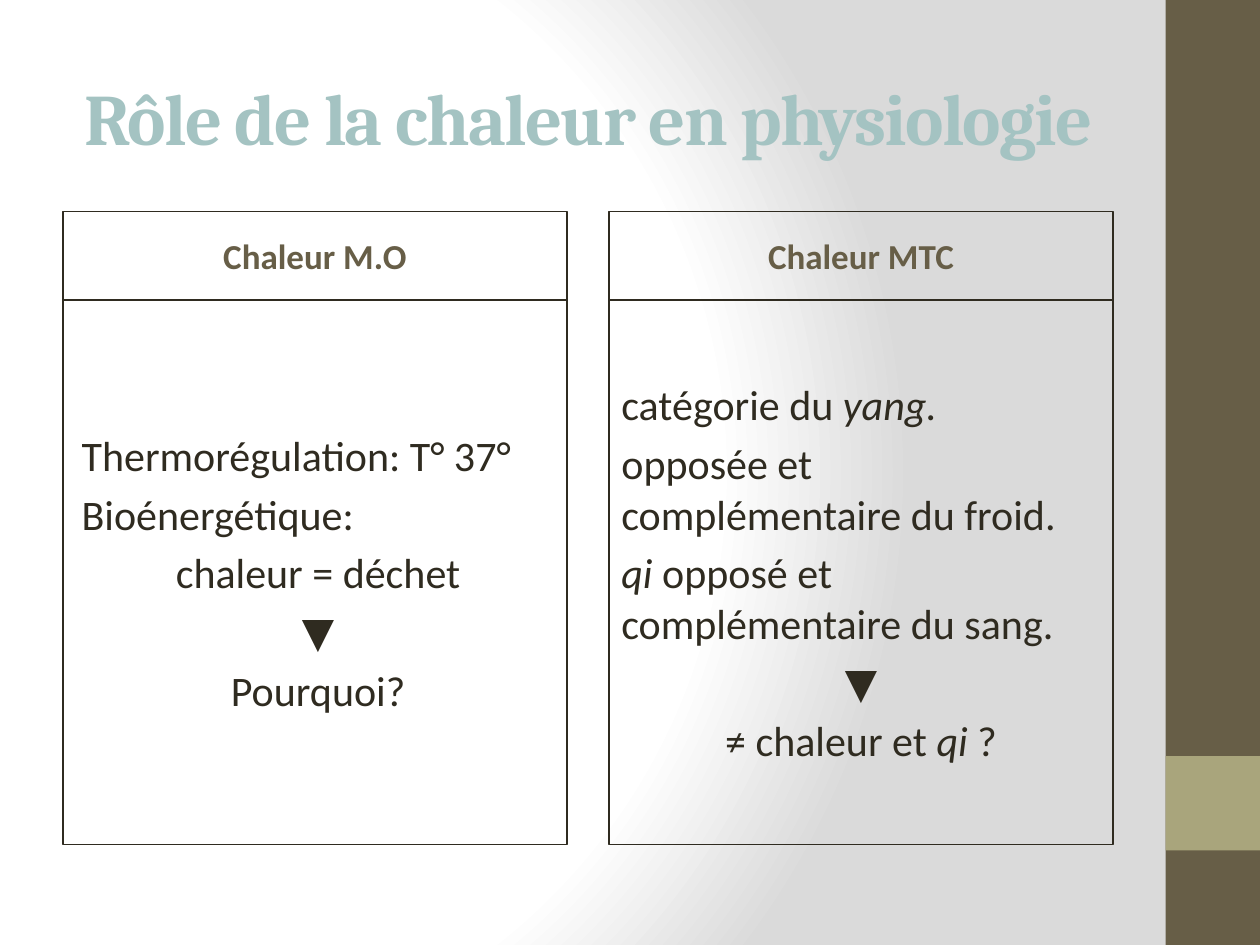
from pptx import Presentation
from pptx import util as u
from pptx.dml import color
from pptx.enum import shapes, text
from pptx.oxml import parse_xml
from pptx.oxml import ns

INK, BROWN, OLIVE, TEAL = "2F2B20", "675E47", "A9A57C", "A4C3C2"
LEFT, CENTER = text.PP_ALIGN.LEFT, text.PP_ALIGN.CENTER
ARROW = (CENTER, [("▼", "Quicksand", False)])


def rgb(value):
    """Turn a hex string into a colour."""
    return color.RGBColor.from_string(value)


def plain(words, align=LEFT):
    """Describe a paragraph of upright Calibri text."""
    return mixed((words, False), align=align)


def mixed(*parts, align=LEFT):
    """Describe a paragraph of (words, italic) parts."""
    return align, [(words, "Calibri", italic) for words, italic in parts]


def set_background(page):
    """Give the page a white to grey radial gradient."""
    stops = [(0, "FFFFFF"), (75, "FFFFFF"), (100, "DADADA")]
    listing = "".join(
        f'<a:gs pos="{place * 1000}"><a:srgbClr val="{value}"/></a:gs>'
        for place, value in stops)
    background = parse_xml(
        f'<p:bg {ns.nsdecls("p", "a")}><p:bgPr><a:gradFill rotWithShape="1">'
        f'<a:gsLst>{listing}</a:gsLst><a:path path="circle">'
        '<a:fillToRect l="20000" t="50000" r="100000" b="50000"/></a:path>'
        '</a:gradFill><a:effectLst/></p:bgPr></p:bg>')
    page.element.cSld.insert(0, background)


def add_rectangle(page, bounds, fill=None, line=None):
    """Add a rectangle with an optional fill and outline."""
    box = page.shapes.add_shape(
        shapes.MSO_SHAPE.RECTANGLE, *[u.Pt(length) for length in bounds])
    box.shadow.inherit = False
    if fill:
        box.fill.solid()
        box.fill.fore_color.rgb = rgb(fill)
    else:
        box.fill.background()
    if line:
        box.line.color.rgb = rgb(line)
        box.line.width = u.Pt(0.75)
    else:
        box.line.fill.background()
    return box


def write(box, paragraphs, size, ink, bold=False, before=0, indent=0):
    """Fill a box with middle-anchored paragraphs."""
    frame = box.text_frame
    frame.word_wrap = True
    frame.vertical_anchor = text.MSO_ANCHOR.MIDDLE
    for index, (align, spans) in enumerate(paragraphs):
        para = frame.add_paragraph() if index else frame.paragraphs[0]
        para.alignment = align
        para.space_before = u.Pt(before)
        if indent:
            para._p.get_or_add_pPr().set("marL", str(u.Pt(indent)))
        for words, font, italic in spans:
            span = para.add_run()
            span.text = words
            span.font.name = font
            span.font.size = u.Pt(size)
            span.font.bold = bold
            span.font.italic = italic
            span.font.color.rgb = rgb(ink)


def add_title(page, words):
    """Add the centred, slightly tightened title."""
    box = page.shapes.add_textbox(u.Pt(36), u.Pt(21.6), u.Pt(600), u.Pt(90))
    write(box, [(CENTER, [(words, "Cambria", False)])], 41.4, TEAL, bold=True)
    span = box.text_frame.paragraphs[0].runs[0]
    span.font._element.set("spc", "-100")


def add_card(page, left, heading, paragraphs, indent=0):
    """Add an outlined heading with an outlined body below it."""
    top, width, height = 121, 288, 50.4
    header = add_rectangle(page, (left, top, width, height), line=INK)
    write(header, [plain(heading, CENTER)], 20, BROWN, bold=True, before=4)
    body = add_rectangle(page, (left, top + height, width, 311), line=INK)
    write(body, paragraphs, 24, INK, before=4.8, indent=indent)


def main():
    """Build and save the deck."""
    deck = Presentation()
    deck.slide_width, deck.slide_height = u.Pt(720), u.Pt(540)
    page = deck.slides.add_slide(deck.slide_layouts[6])
    set_background(page)
    add_rectangle(page, (666, 0, 54, 540), fill=BROWN)
    add_rectangle(page, (666, 432, 54, 54), fill=OLIVE)
    add_title(page, "Rôle de la chaleur en physiologie")
    add_card(page, 36, "Chaleur M.O", [
        plain("Thermorégulation: T° 37°"),
        plain("Bioénergétique:"),
        plain("chaleur = déchet", CENTER),
        ARROW,
        plain("Pourquoi?", CENTER),
    ], indent=3.6)
    add_card(page, 348, "Chaleur MTC", [
        mixed(("catégorie du ", False), ("yang.", True)),
        plain("opposée et complémentaire du froid."),
        mixed(("qi", True), (" opposé et complémentaire du sang.", False)),
        ARROW,
        mixed(("≠ chaleur et ", False), ("qi ", True), ("?", False), align=CENTER),
    ])
    deck.save("out.pptx")


if __name__ == "__main__":
    main()
